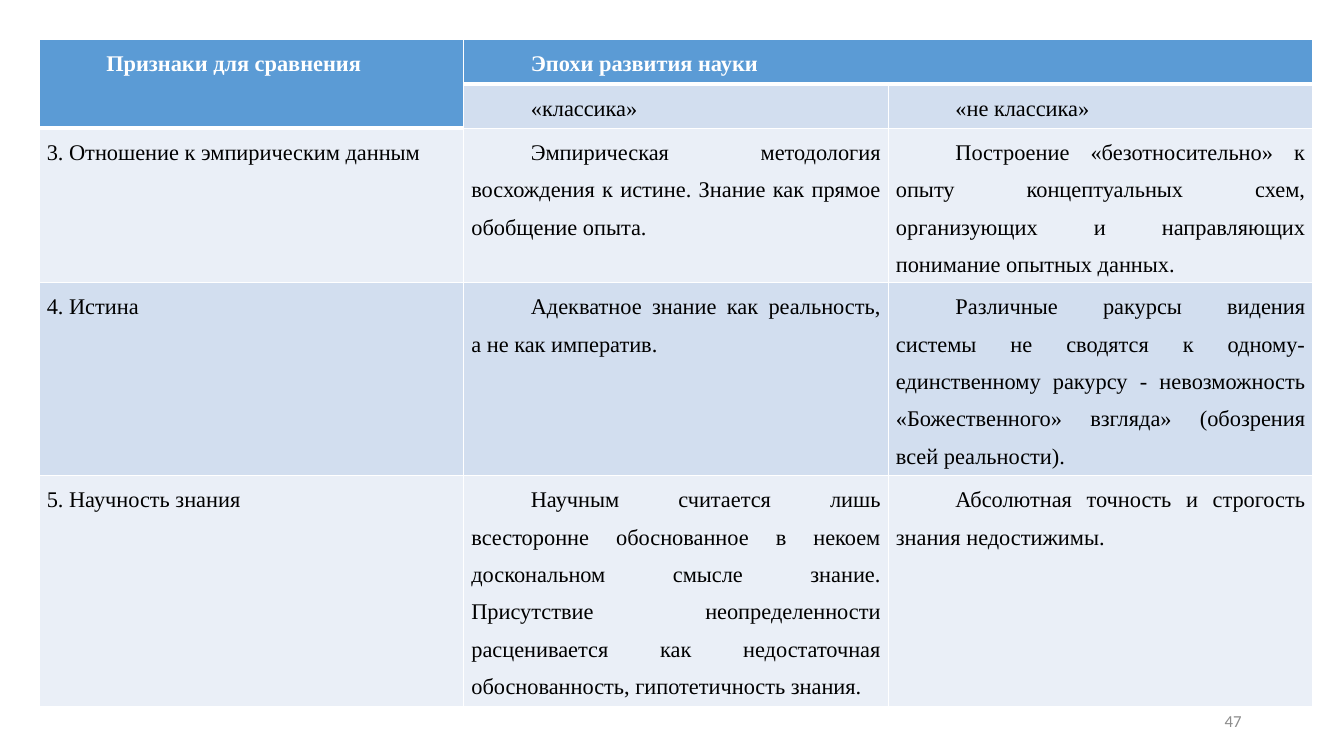
from dataclasses import dataclass

from lxml import etree
from pptx import Presentation
from pptx.dml.color import RGBColor
from pptx.enum import text
from pptx.oxml import ns
from pptx.util import Cm, Pt


@dataclass(frozen=True)
class Theme:
    header: str = "5B9BD5"
    dark_band: str = "D2DEEF"
    light_band: str = "EAEFF7"
    white: str = "FFFFFF"
    black: str = "000000"
    grey: str = "8C8C8C"
    table_font: str = "Times New Roman"
    number_font: str = "Calibri"
    table_size: int = 16
    number_size: int = 12
    thin: int = 1
    thick: int = 3


theme = Theme()


def write(frame, words, *, font, size, color, bold=False, align, spacing=None, indent=0):
    para = frame.paragraphs[0]
    para.alignment = align
    para.line_spacing = spacing
    if indent:
        para._p.get_or_add_pPr().set("indent", str(indent))
    span = para.add_run()
    span.text = words
    span.font.name = font
    span.font.size = Pt(size)
    span.font.bold = bold
    span.font.color.rgb = RGBColor.from_string(color)


def add_borders(cell, top, bottom):
    """Draw white cell borders; top and bottom are widths in points."""
    properties = cell._tc.get_or_add_tcPr()
    widths = {"a:lnL": theme.thin, "a:lnR": theme.thin, "a:lnT": top, "a:lnB": bottom}
    for tag, width in widths.items():
        line = etree.SubElement(properties, ns.qn(tag), w=str(Pt(width)))
        fill = etree.SubElement(line, ns.qn("a:solidFill"))
        etree.SubElement(fill, ns.qn("a:srgbClr"), val=theme.white)


deck = Presentation()
deck.slide_width, deck.slide_height = Cm(33.87), Cm(19.05)
page = deck.slides.add_slide(deck.slide_layouts[6])

rows = [
    ["Признаки для сравнения", "Эпохи развития науки", ""],
    ["", "«классика»", "«не классика»"],
    ["3. Отношение к эмпирическим данным",
     "Эмпирическая методология восхождения к истине. Знание как прямое обобщение опыта.",
     "Построение «безотносительно» к опыту концептуальных схем, организующих и "
     "направляющих понимание опытных данных."],
    ["4. Истина",
     "Адекватное знание как реальность, а не как императив.",
     "Различные ракурсы видения системы не сводятся к одному-единственному ракурсу - "
     "невозможность «Божественного» взгляда» (обозрения всей реальности)."],
    ["5. Научность знания",
     "Научным считается лишь всесторонне обоснованное в некоем доскональном смысле знание. "
     "Присутствие неопределенности расценивается как недостаточная обоснованность, "
     "гипотетичность знания.",
     "Абсолютная точность и строгость знания недостижимы."],
]
row_heights = [1.12, 1.12, 3.89, 4.86, 5.82]
column_width = 10.7

table = page.shapes.add_table(
    len(rows), 3, Cm(0.99), Cm(0.99), Cm(3 * column_width), Cm(sum(row_heights))
).table
for column in table.columns:
    column.width = Cm(column_width)
for row, height in zip(table.rows, row_heights):
    row.height = Cm(height)
table.cell(0, 0).merge(table.cell(1, 0))
table.cell(0, 1).merge(table.cell(0, 2))

for r, texts in enumerate(rows):
    for c, words in enumerate(texts):
        cell = table.cell(r, c)
        header_end = 1 if c == 0 else 0
        in_header = r <= header_end
        add_borders(
            cell,
            top=theme.thick if r == header_end + 1 else theme.thin,
            bottom=theme.thick if in_header else theme.thin,
        )
        band = theme.dark_band if r % 2 else theme.light_band
        cell.fill.solid()
        cell.fill.fore_color.rgb = RGBColor.from_string(theme.header if in_header else band)
        cell.margin_left = cell.margin_right = Cm(0.19)
        cell.margin_top = cell.margin_bottom = 0
        if words:
            write(cell.text_frame, words, font=theme.table_font, size=theme.table_size,
                  color=theme.white if in_header else theme.black, bold=in_header,
                  align=text.PP_ALIGN.JUSTIFY, spacing=1.5,
                  indent=Cm(1.5) if c or in_header else 0)

number_box = page.shapes.add_textbox(Cm(23.92), Cm(17.66), Cm(7.62), Cm(1.01))
number_box.text_frame.word_wrap = True
number_box.text_frame.vertical_anchor = text.MSO_ANCHOR.MIDDLE
write(number_box.text_frame, "47", font=theme.number_font, size=theme.number_size,
      color=theme.grey, align=text.PP_ALIGN.RIGHT)

deck.save("out.pptx")
